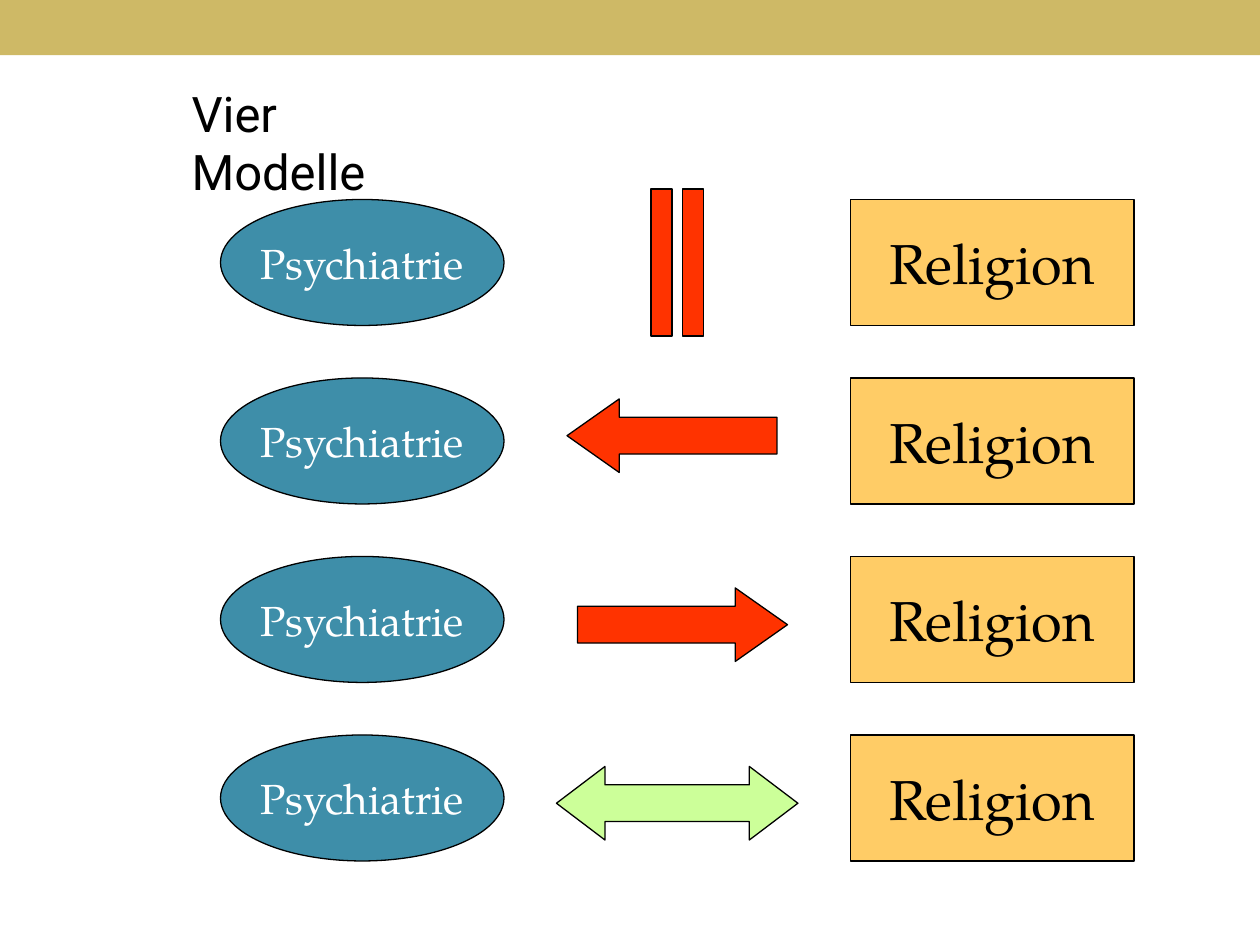
from pptx import Presentation
from pptx.dml.color import RGBColor
from pptx.enum.shapes import MSO_SHAPE
from pptx.enum.text import MSO_ANCHOR, MSO_AUTO_SIZE, PP_ALIGN
from pptx.util import Inches, Pt

GOLD = RGBColor(0xCE, 0xB9, 0x66)
BLUE = RGBColor(0x3E, 0x8E, 0xA9)
SAND = RGBColor(0xFF, 0xCC, 0x66)
RED = RGBColor(0xFF, 0x33, 0x00)
GREEN = RGBColor(0xCC, 0xFF, 0x99)
BLACK = RGBColor(0, 0, 0)
WHITE = RGBColor(0xFF, 0xFF, 0xFF)

UNIT = Inches(1) // 12
TOP, STEP = 19, 17
SIDES = [
    (21, MSO_SHAPE.OVAL, BLUE, "Psychiatrie", 24, WHITE),
    (81, MSO_SHAPE.RECTANGLE, SAND, "Religion", 32, BLACK),
]
ARROWS = [
    (MSO_SHAPE.LEFT_ARROW, (54, 38, 20, 7), RED, 0.71),
    (MSO_SHAPE.RIGHT_ARROW, (55, 56, 20, 7), RED, 0.71),
    (MSO_SHAPE.LEFT_RIGHT_ARROW, (53, 73, 23, 7), GREEN, 0.66),
]


def assign(item, values):
    for name, value in values.items():
        setattr(item, name, value)


def add_text(shape, text, font, frame, align):
    body = shape.text_frame
    body.text = text
    assign(body, frame)
    line = body.paragraphs[0]
    line.alignment = align
    face = line.runs[0].font
    face.color.rgb = font["color"]
    assign(face, {"name": font["name"], "size": Pt(font["size"])})


def add_form(shapes, kind, box, fill, edge=True):
    form = shapes.add_shape(kind, *(round(UNIT * part) for part in box))
    form.shadow.inherit = False
    form.fill.solid()
    form.fill.fore_color.rgb = fill
    if edge:
        form.line.color.rgb = BLACK
        form.line.width = Pt(0.75)
    else:
        form.line.fill.background()
    return form


def add_title(slide):
    title = slide.shapes.title
    place = {"left": 1.42, "top": 0.61, "width": 2.3, "height": 0.57}
    assign(title, {name: Inches(size) for name, size in place.items()})
    font = {"name": "Roboto", "size": 28, "color": BLACK}
    frame = {"word_wrap": True, "auto_size": MSO_AUTO_SIZE.NONE,
             "vertical_anchor": MSO_ANCHOR.TOP}
    add_text(title, "Vier Modelle", font, frame, PP_ALIGN.LEFT)


def add_pair(shapes, row):
    for left, kind, fill, text, size, color in SIDES:
        form = add_form(shapes, kind, (left, TOP + row * STEP, 27, 12), fill)
        font = {"name": "TeX Gyre Pagella", "size": size, "color": color}
        frame = {"word_wrap": False, "vertical_anchor": MSO_ANCHOR.MIDDLE}
        add_text(form, text, font, frame, PP_ALIGN.CENTER)


def add_bars(shapes):
    group = shapes.add_group_shape()
    for left in (62, 65):
        add_form(group.shapes, MSO_SHAPE.RECTANGLE, (left, 18, 2, 14), RED)


def add_arrow(shapes, kind, box, fill, head):
    arrow = add_form(shapes, kind, box, fill)
    arrow.adjustments[0] = 0.5
    arrow.adjustments[1] = head


def main():
    deck = Presentation()
    assign(deck, {"slide_width": Inches(10), "slide_height": Inches(7.5)})
    slide = deck.slides.add_slide(deck.slide_layouts[5])
    shapes = slide.shapes
    add_form(shapes, MSO_SHAPE.RECTANGLE, (0, 0, 120, 5.25), GOLD, False)
    add_title(slide)
    for row in range(4):
        add_pair(shapes, row)
    add_bars(shapes)
    for arrow in ARROWS:
        add_arrow(shapes, *arrow)
    deck.save("out.pptx")


if __name__ == "__main__":
    main()
